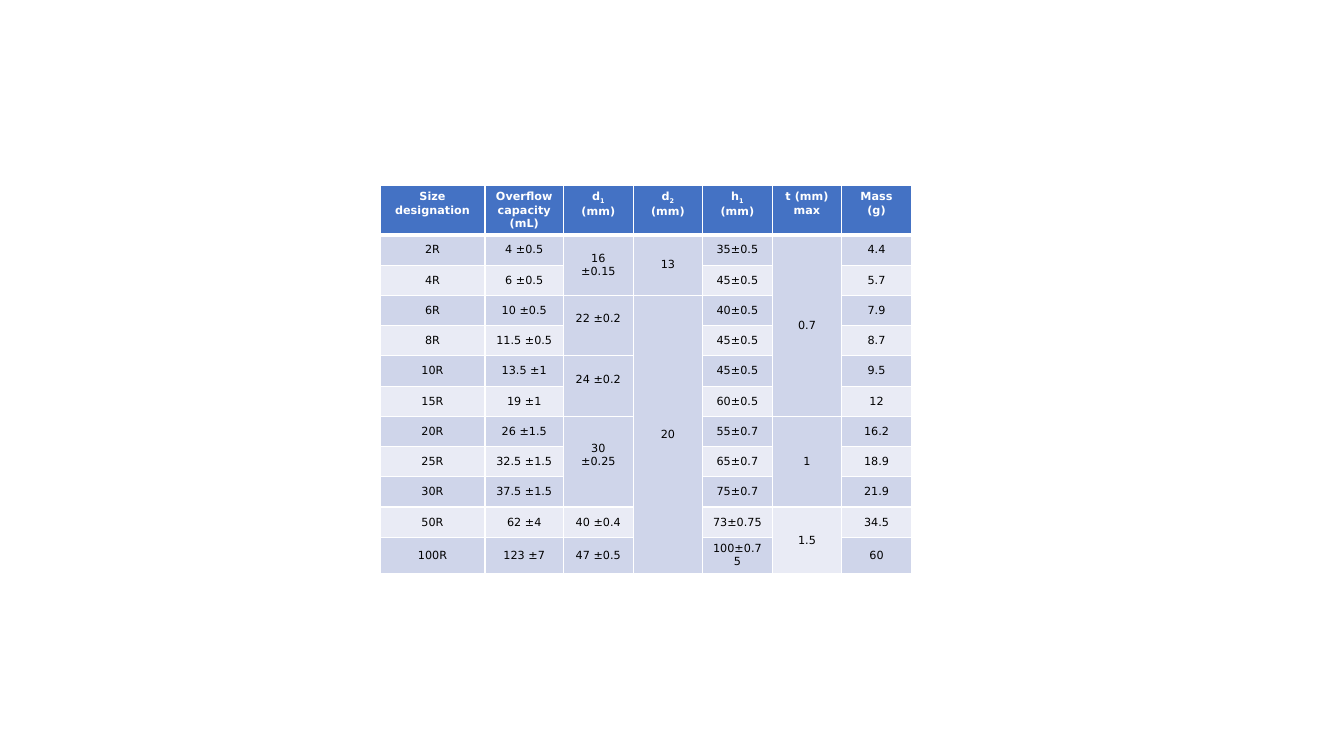
from pptx import Presentation
from pptx.dml.color import RGBColor
from pptx.enum.text import MSO_ANCHOR, PP_ALIGN
from pptx.oxml.ns import qn
from pptx.util import Inches, Pt
from lxml.etree import Element, SubElement

HEAD = [
    ["Size designation"],
    ["Overflow capacity (mL)"],
    ["d", "1", " (mm)"],
    ["d", "2", " (mm)"],
    ["h", "1", " (mm)"],
    ["t (mm) max"],
    ["Mass (g)"],
]
ROWS = [
    ("2R", "4 ±0.5", "16 ±0.15", "13", "35±0.5", "0.7", "4.4"),
    ("4R", "6 ±0.5", None, None, "45±0.5", None, "5.7"),
    ("6R", "10 ±0.5", "22 ±0.2", "20", "40±0.5", None, "7.9"),
    ("8R", "11.5 ±0.5", None, None, "45±0.5", None, "8.7"),
    ("10R", "13.5 ±1", "24 ±0.2", None, "45±0.5", None, "9.5"),
    ("15R", "19 ±1", None, None, "60±0.5", None, "12"),
    ("20R", "26 ±1.5", "30 ±0.25", None, "55±0.7", "1", "16.2"),
    ("25R", "32.5 ±1.5", None, None, "65±0.7", None, "18.9"),
    ("30R", "37.5 ±1.5", None, None, "75±0.7", None, "21.9"),
    ("50R", "62 ±4", "40 ±0.4", None, "73±0.75", "1.5", "34.5"),
    ("100R", "123 ±7", "47 ±0.5", None, "100±0.75", None, "60"),
]
RAISED = {"22 ±0.2", "24 ±0.2", "30 ±0.25"}
COLORS = {"head": "4472C4", "dark": "CFD5EA", "light": "E9EBF5",
          "line": "FFFFFF", "text": "000000"}
WIDTHS = [1.04, 0.78] + [0.69] * 5
HEAD_H, ROW_H = 0.41, 0.3
FONT = "DejaVu Sans"


def border(cell, top, bottom):
    props = cell._tc.get_or_add_tcPr()
    sides = [("L", 1), ("R", 1), ("T", top), ("B", bottom)]
    for spot, (side, width) in enumerate(sides):
        line = Element(qn("a:ln" + side), w=str(Pt(width)))
        fill = SubElement(line, qn("a:solidFill"))
        SubElement(fill, qn("a:srgbClr"), val=COLORS["line"])
        props.insert(spot, line)


def paint(cell, fill, top=1, bottom=1):
    cell.fill.solid()
    cell.fill.fore_color.rgb = RGBColor.from_string(COLORS[fill])
    border(cell, top, bottom)


def write(cell, parts, color, bold):
    para = cell.text_frame.paragraphs[0]
    para.alignment = PP_ALIGN.CENTER
    for spot, text in enumerate(parts):
        run = para.add_run()
        run.text = text
        run.font.name = FONT
        run.font.size = Pt(8)
        run.font.bold = bold
        run.font.color.rgb = RGBColor.from_string(COLORS[color])
        if spot == 1:
            run.font._element.set("baseline", "-25000")


def main():
    deck = Presentation()
    deck.slide_width, deck.slide_height = Inches(13.33), Inches(7.5)
    slide = deck.slides.add_slide(deck.slide_layouts[6])
    high = HEAD_H + ROW_H * len(ROWS)
    table = slide.shapes.add_table(
        len(ROWS) + 1, len(HEAD), Inches(3.77), Inches(1.84),
        Inches(sum(WIDTHS)), Inches(high)).table
    for col, width in zip(table.columns, WIDTHS):
        col.width = Inches(width)
    for num, row in enumerate(table.rows):
        row.height = Inches(ROW_H if num else HEAD_H)

    for col, parts in enumerate(HEAD):
        cell = table.cell(0, col)
        paint(cell, "head", bottom=3)
        write(cell, parts, "line", True)

    for col, values in enumerate(zip(*ROWS)):
        for num, text in enumerate(values, 1):
            cell = table.cell(num, col)
            if text is not None:
                start, fill = cell, "dark" if num % 2 else "light"
                cell.vertical_anchor = MSO_ANCHOR.MIDDLE
                write(cell, [text], "text", False)
                if text in RAISED:
                    cell.margin_bottom = Inches(0.18)
            paint(cell, fill, top=3 if num == 1 else 1)
            last = num == len(values) or values[num] is not None
            if last and cell is not start:
                start.merge(cell)

    deck.save("out.pptx")


if __name__ == "__main__":
    main()
